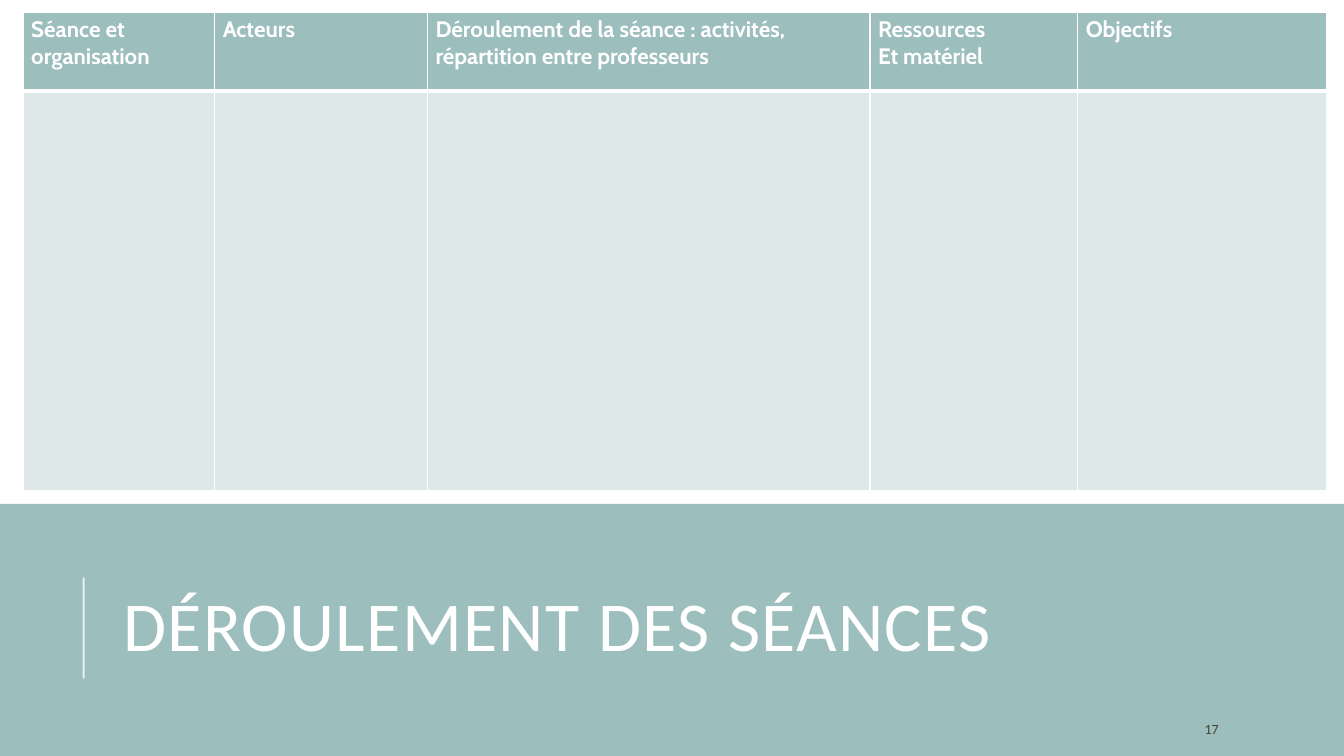
from dataclasses import dataclass

from lxml import etree
from pptx import Presentation
from pptx import util as u
from pptx.dml.color import RGBColor
from pptx.enum import shapes, text
from pptx.oxml import ns


@dataclass(frozen=True)
class Theme:
    teal: str = "9CBEBD"
    pale: str = "DEE8E8"
    white: str = "FFFFFF"
    brown: str = "474233"
    heading_font: str = "Calibri"
    table_font: str = "Cabin"
    title_size: int = 50
    header_size: int = 16
    number_size: int = 10


THEME = Theme()
SLIDE_SIZE = (13.33, 7.5)
HEADERS = [
    ["Séance et organisation"],
    ["Acteurs"],
    ["Déroulement de la séance : activités, répartition entre professeurs"],
    ["Ressources", "Et matériel"],
    ["Objectifs"],
]
COLUMN_WIDTHS = [1.9, 2.11, 4.39, 2.06, 2.47]
ROW_HEIGHTS = [0.78, 3.97]


def add_child(parent, tag, **attributes):
    return etree.SubElement(parent, ns.qn(tag), attributes)


def add_span(para, words, font, size, colour, bold=False):
    span = para.add_run()
    span.text = words
    span.font.name = font
    span.font.size = u.Pt(size)
    span.font.bold = bold
    span.font.color.rgb = RGBColor.from_string(colour)
    return span


def place(shape, left, top, width, height):
    shape.left, shape.top = u.Inches(left), u.Inches(top)
    shape.width, shape.height = u.Inches(width), u.Inches(height)


def style_cell(cell, fill, bottom_width):
    """Give the cell white borders, then its fill, in the order the schema asks for."""
    properties = cell._tc.get_or_add_tcPr()
    widths = {"a:lnL": 1, "a:lnR": 1, "a:lnT": 1, "a:lnB": bottom_width}
    for side, width in widths.items():
        border = add_child(properties, side, w=str(u.Pt(width)))
        add_child(add_child(border, "a:solidFill"), "a:srgbClr", val=THEME.white)
    cell.fill.solid()
    cell.fill.fore_color.rgb = RGBColor.from_string(fill)
    cell.margin_left = cell.margin_right = u.Inches(0.08)
    cell.margin_top = cell.margin_bottom = u.Inches(0.04)


def add_session_table(page, left, top):
    box = [u.Inches(n) for n in (left, top, sum(COLUMN_WIDTHS), sum(ROW_HEIGHTS))]
    table = page.shapes.add_table(len(ROW_HEIGHTS), len(COLUMN_WIDTHS), *box).table
    for row, height in zip(table.rows, ROW_HEIGHTS):
        row.height = u.Inches(height)
    for index, (width, lines) in enumerate(zip(COLUMN_WIDTHS, HEADERS)):
        table.columns[index].width = u.Inches(width)
        header = table.cell(0, index)
        style_cell(header, THEME.teal, 3)
        style_cell(table.cell(1, index), THEME.pale, 1)
        frame = header.text_frame
        for number, line in enumerate(lines):
            para = frame.add_paragraph() if number else frame.paragraphs[0]
            add_span(para, line, THEME.table_font, THEME.header_size, THEME.white, bold=True)


def add_rule(page, x, bottom, top):
    rule = page.shapes.add_connector(
        shapes.MSO_CONNECTOR.STRAIGHT, *[u.Inches(n) for n in (x, bottom, x, top)])
    rule.line.width = u.Pt(1.5)
    rule.line.color.rgb = RGBColor.from_string(THEME.white)
    colour = rule.line._get_or_add_ln().find(".//" + ns.qn("a:srgbClr"))
    add_child(colour, "a:alpha", val="80000")
    add_child(rule._element.spPr, "a:effectLst")


def add_title_band(page, left, top, width, height):
    band = page.shapes.add_shape(
        shapes.MSO_SHAPE.RECTANGLE, *[u.Inches(n) for n in (left, top, width, height)])
    band.shadow.inherit = False
    band.fill.solid()
    band.fill.fore_color.rgb = RGBColor.from_string(THEME.teal)
    band.line.fill.background()

    title = page.shapes.title
    title.element.addprevious(band.element)
    place(title, left + 1.12, top + 0.44, 10.63, 1.64)
    frame = title.text_frame
    frame.word_wrap = True
    frame.auto_size = text.MSO_AUTO_SIZE.NONE
    frame.vertical_anchor = text.MSO_ANCHOR.MIDDLE
    para = frame.paragraphs[0]
    para.alignment = text.PP_ALIGN.LEFT
    para.line_spacing = 0.8
    span = add_span(para, "DÉROULEMENT DES SÉANCES",
                    THEME.heading_font, THEME.title_size, THEME.white)
    span.font._element.set("spc", "100")

    add_rule(page, left + 0.83, top + 1.73, top + 0.73)


def add_page_number(page, left, top, width, height):
    box = page.shapes.add_textbox(*[u.Inches(n) for n in (left, top, width, height)])
    box.text_frame.word_wrap = True
    box.text_frame.vertical_anchor = text.MSO_ANCHOR.MIDDLE
    add_span(box.text_frame.paragraphs[0], "17",
             THEME.heading_font, THEME.number_size, THEME.brown)


def main():
    deck = Presentation()
    deck.slide_width, deck.slide_height = [u.Inches(n) for n in SLIDE_SIZE]
    page = deck.slides.add_slide(deck.slide_layouts.get_by_name("Title Only"))
    page.background.fill.solid()
    page.background.fill.fore_color.rgb = RGBColor.from_string(THEME.white)
    add_title_band(page, 0, 5, SLIDE_SIZE[0], 2.5)
    add_session_table(page, 0.23, 0.12)
    add_page_number(page, 11.85, 7.08, 1.06, 0.3)
    deck.save("out.pptx")


if __name__ == "__main__":
    main()
